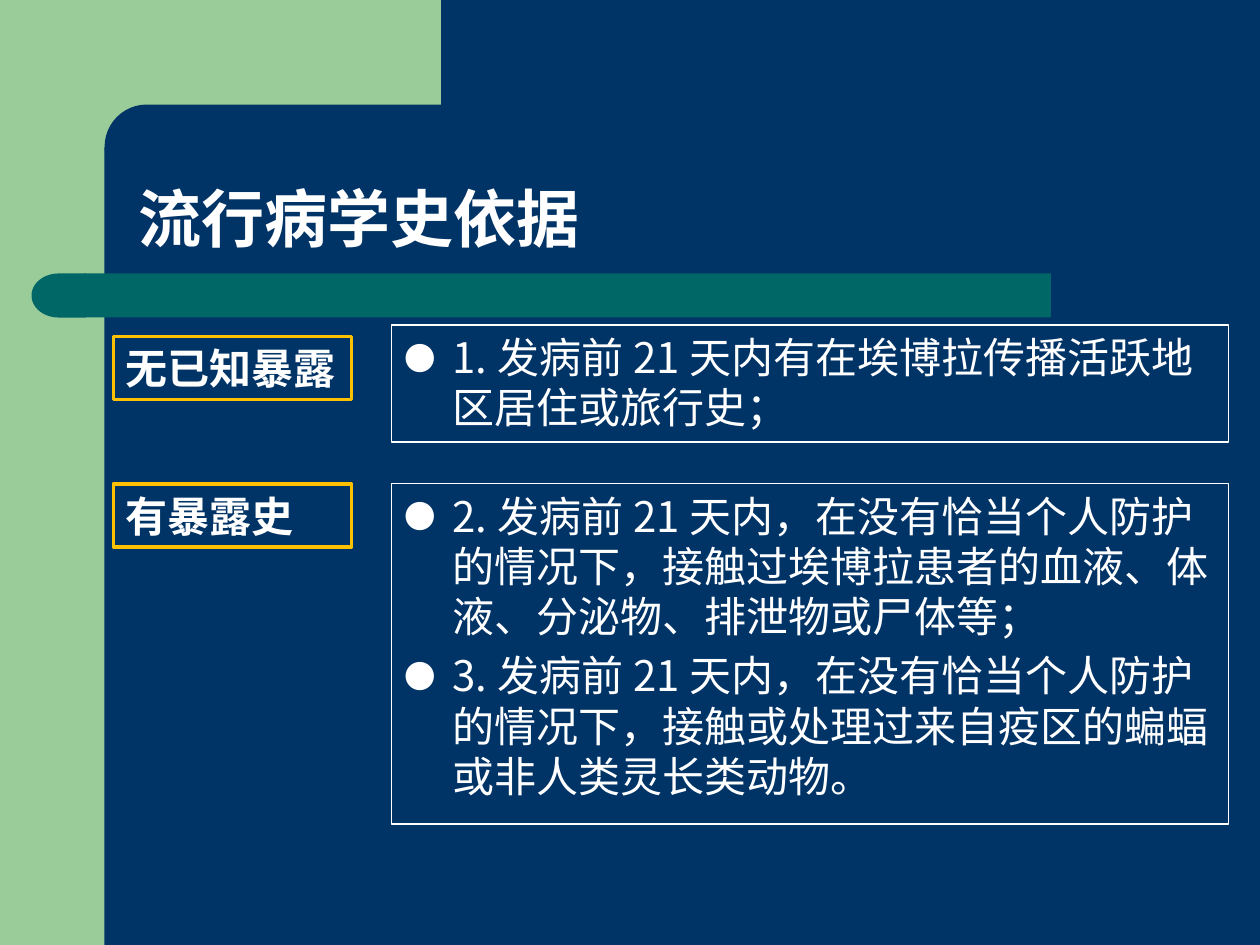
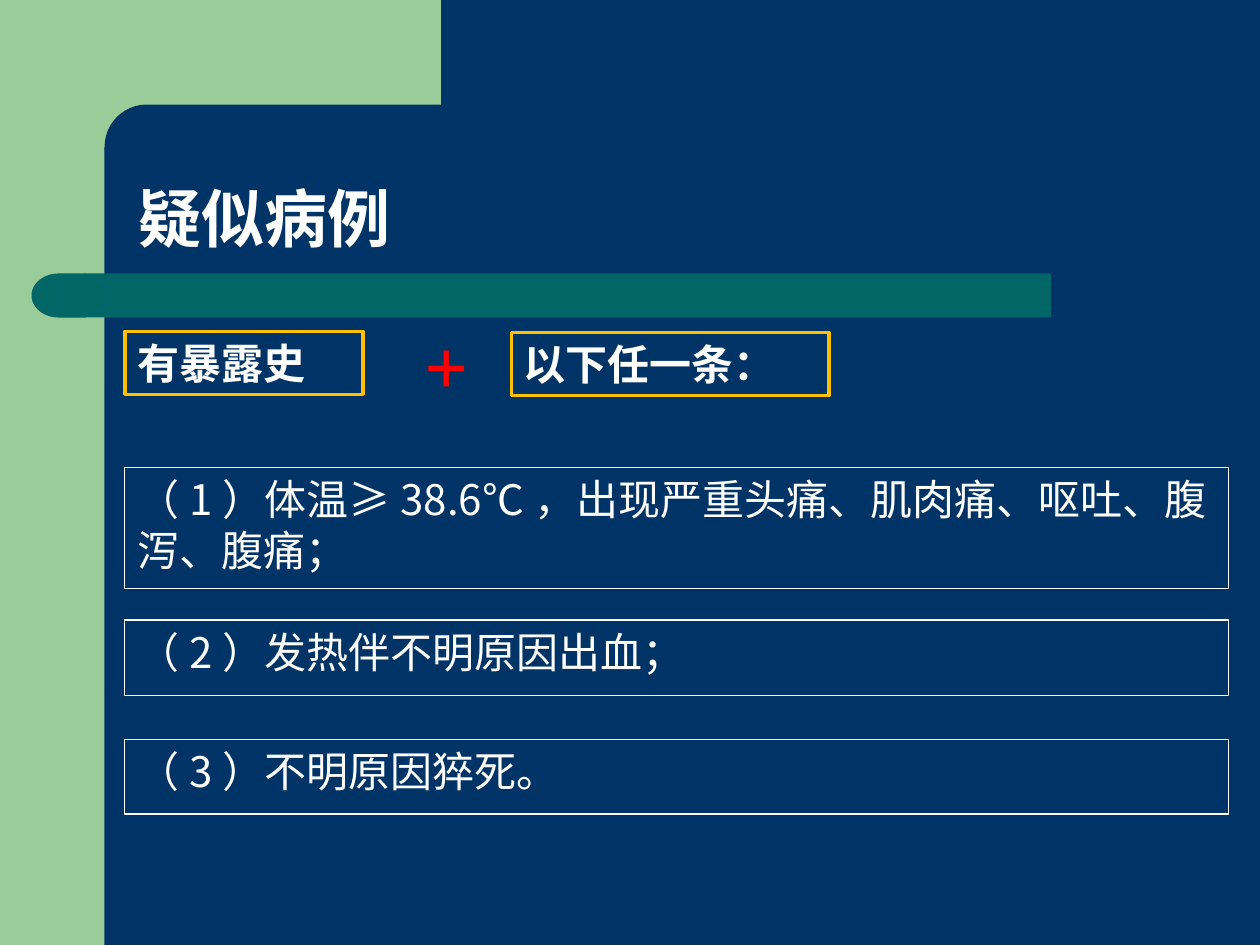
"""Build two slides on Ebola exposure history and suspected cases."""
from lxml.etree import SubElement
from pptx import Presentation
from pptx.dml.color import RGBColor
from pptx.enum.shapes import MSO_SHAPE as Preset
from pptx.enum.text import MSO_ANCHOR as Anchor, MSO_AUTO_SIZE as AutoSize, PP_ALIGN as Align
from pptx.oxml.ns import qn
from pptx.util import Inches, Pt

NAVY = RGBColor(0x00, 0x33, 0x66)
GREEN = RGBColor(0x99, 0xCC, 0x99)
TEAL = RGBColor(0x00, 0x66, 0x66)
GOLD = RGBColor(0xFF, 0xC0, 0x00)
WHITE = RGBColor(0xFF, 0xFF, 0xFF)
RED = RGBColor(0xFF, 0x00, 0x00)
CJK, SERIF = "Noto Sans CJK SC", "Times New Roman"

WIDTH, HEIGHT = 10, 7.5
RIGHT = 9.75
LABEL_WIDTH, LABEL_HEIGHT = 1.89, 0.5

HISTORY_TITLE = "流行病学史依据"
HISTORY_LABEL_LEFT, HISTORY_TEXT_LEFT = 0.9, 3.11
HISTORY = [
    {"label": "无已知暴露", "label_top": 2.67, "top": 2.58, "height": 0.93,
     "criteria": ["1.发病前21天内有在埃博拉传播活跃地区居住或旅行史；"]},
    {"label": "有暴露史", "label_top": 3.84, "top": 3.84, "height": 2.7,
     "criteria": [
         "2.发病前21天内，在没有恰当个人防护的情况下，接触过埃博拉患者的血液、体液、分泌物、排泄物或尸体等；",
         "3.发病前21天内，在没有恰当个人防护的情况下，接触或处理过来自疫区的蝙蝠或非人类灵长类动物。"]},
]

SUSPECTED_TITLE = "疑似病例"
SUSPECTED_LEFT = 0.99
CONDITIONS = [("有暴露史", SUSPECTED_LEFT, 2.63, LABEL_WIDTH),
              ("以下任一条：", 4.06, 2.64, 2.52)]
PLUS = ("+", 3.27, 2.47, 0.55, 0.84)
SYMPTOMS = [("（1）体温≥38.6℃，出现严重头痛、肌肉痛、呕吐、腹泻、腹痛；", 3.71, 0.96),
            ("（2）发热伴不明原因出血；", 4.92, 0.6),
            ("（3）不明原因猝死。", 5.87, 0.59)]

BACKDROP = [
    (Preset.RECTANGLE, (0, 0, 0.83, HEIGHT), GREEN),
    (Preset.RECTANGLE, (0.75, 0, 2.75, 1.17), GREEN),
    (Preset.ROUNDED_RECTANGLE, (0.83, 0.83, 5.58, 0.67), NAVY),
    (Preset.RECTANGLE, (0.67, 2.17, 7.67, 0.35), TEAL),
    (Preset.FLOWCHART_DELAY, (0.25, 2.17, 0.43, 0.35), TEAL),
]


def add_block(slide, preset, box, fill=None, line=None, line_width=0.75):
    block = slide.shapes.add_shape(preset, *map(Inches, box))
    block.shadow.inherit = False
    if fill is None:
        block.fill.background()
    else:
        block.fill.solid()
        block.fill.fore_color.rgb = fill
    if line is None:
        block.line.fill.background()
    else:
        block.line.color.rgb = line
        block.line.width = Pt(line_width)
    return block


def style_text(frame, size, color=WHITE, bold=False, font=CJK):
    for paragraph in frame.paragraphs:
        paragraph.alignment = Align.LEFT
        for run in paragraph.runs:
            run.font.size = Pt(size)
            run.font.bold = bold
            run.font.color.rgb = color
            run.font.name = font
            SubElement(run.font._element, qn("a:ea"), typeface=font)


def add_bullet(paragraph):
    properties = paragraph._p.get_or_add_pPr()
    properties.set("marL", str(Inches(0.38)))
    properties.set("indent", str(-Inches(0.38)))
    SubElement(properties, qn("a:buSzPct"), val="75000")
    SubElement(properties, qn("a:buFont"), typeface=CJK)
    SubElement(properties, qn("a:buChar"), char="●")


def add_label(slide, text, left, top, width=LABEL_WIDTH):
    label = add_block(slide, Preset.RECTANGLE, (left, top, width, LABEL_HEIGHT), NAVY, GOLD, 2)
    frame = label.text_frame
    frame.text = text
    frame.word_wrap = True
    frame.auto_size = AutoSize.SHAPE_TO_FIT_TEXT
    frame.vertical_anchor = Anchor.TOP
    style_text(frame, 24, bold=True)


def add_criteria(slide, criteria, left, top, height, bulleted=False):
    panel = add_block(slide, Preset.RECTANGLE, (left, top, RIGHT - left, height), line=WHITE)
    frame = panel.text_frame
    frame.text = "\n".join(criteria)
    frame.word_wrap = True
    frame.vertical_anchor = Anchor.TOP
    style_text(frame, 24)
    for paragraph in frame.paragraphs:
        paragraph.space_before = Pt(24 * 0.2)
        if bulleted:
            add_bullet(paragraph)


def add_titled_slide(deck, layout, text):
    slide = deck.slides.add_slide(layout)
    title = slide.shapes.title
    title.left, title.top, title.width, title.height = map(Inches, (1, 0.83, 8.75, 1.25))
    frame = title.text_frame
    frame.text = text
    frame.auto_size = AutoSize.NONE
    frame.vertical_anchor = Anchor.BOTTOM
    frame.paragraphs[0].line_spacing = 0.9
    style_text(frame, 36, bold=True)
    return slide


def move_backdrop_to_layout(slide, layout):
    for depth, (preset, box, color) in enumerate(BACKDROP):
        part = add_block(slide, preset, box, color)
        if preset == Preset.ROUNDED_RECTANGLE:
            part.adjustments[0] = 0.5
        elif preset == Preset.FLOWCHART_DELAY:
            part.rotation = 180
        layout.shapes._spTree.insert(2 + depth, part._element)


def main():
    deck = Presentation()
    deck.slide_width, deck.slide_height = Inches(WIDTH), Inches(HEIGHT)
    background = deck.slide_master.background.fill
    background.solid()
    background.fore_color.rgb = NAVY
    layout = deck.slide_layouts[5]

    history = add_titled_slide(deck, layout, HISTORY_TITLE)
    move_backdrop_to_layout(history, layout)
    for group in HISTORY:
        add_label(history, group["label"], HISTORY_LABEL_LEFT, group["label_top"])
        add_criteria(history, group["criteria"], HISTORY_TEXT_LEFT,
                     group["top"], group["height"], bulleted=True)

    suspected = add_titled_slide(deck, layout, SUSPECTED_TITLE)
    for condition in CONDITIONS:
        add_label(suspected, *condition)
    sign, *box = PLUS
    plus = suspected.shapes.add_textbox(*map(Inches, box)).text_frame
    plus.text = sign
    plus.word_wrap = False
    plus.auto_size = AutoSize.SHAPE_TO_FIT_TEXT
    style_text(plus, 44, RED, bold=True, font=SERIF)
    for symptom, top, height in SYMPTOMS:
        add_criteria(suspected, [symptom], SUSPECTED_LEFT, top, height)

    deck.save("out.pptx")


if __name__ == "__main__":
    main()
